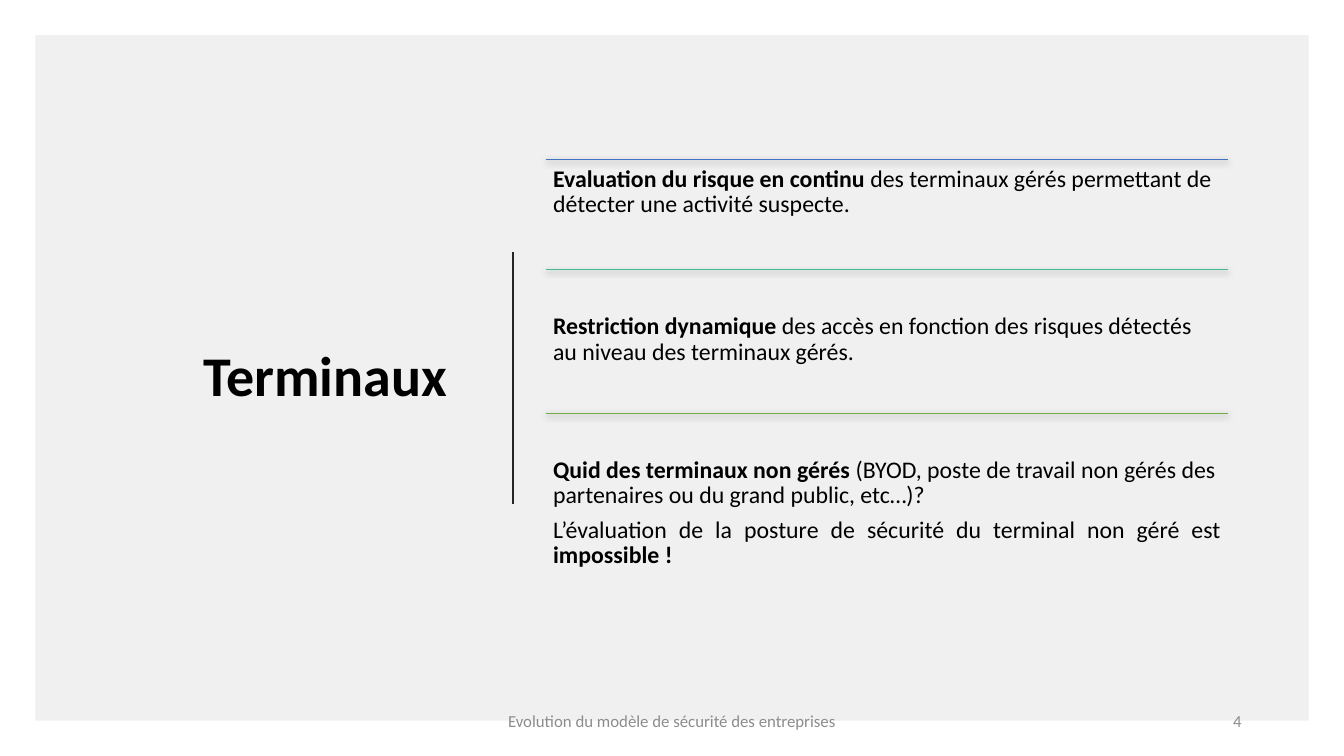
import pptx
import pptx.dml.color
import pptx.enum.shapes
import pptx.enum.text
import pptx.oxml
import pptx.oxml.ns
import pptx.util

RGBColor = pptx.dml.color.RGBColor
Align = pptx.enum.text.PP_ALIGN
Anchor = pptx.enum.text.MSO_ANCHOR
Pt = pptx.util.Pt

PANEL = RGBColor(0xE7, 0xE6, 0xE6)
BLACK = RGBColor(0x00, 0x00, 0x00)
DIVIDER = RGBColor(0x26, 0x26, 0x26)
FOOTER = RGBColor(0x8C, 0x8C, 0x8C)
BLUE = RGBColor(0x44, 0x72, 0xC4)
TEAL = RGBColor(0x43, 0xBB, 0x8D)
GREEN = RGBColor(0x70, 0xAD, 0x47)

COLUMNS, ROWS = 160, 90
NAMESPACE = pptx.oxml.ns.nsdecls("a")
SHADOW = (
    '<a:outerShdw blurRad="57150" dist="19050" dir="5400000" algn="ctr" rotWithShape="0">'
    '<a:srgbClr val="000000"><a:alpha val="63000"/></a:srgbClr></a:outerShdw>'
)


class SlideBuilder:
    """Draws styled elements on one slide, placed by grid columns and rows."""

    font = "Calibri"

    def __init__(self, presentation):
        self.cell_width = presentation.slide_width / COLUMNS
        self.cell_height = presentation.slide_height / ROWS
        self.slide = presentation.slides.add_slide(presentation.slide_layouts[6])

    def place(self, column, row, width, height):
        return (
            round(column * self.cell_width),
            round(row * self.cell_height),
            round(width * self.cell_width),
            round(height * self.cell_height),
        )

    def panel(self, area, color, opacity):
        shape = self.slide.shapes.add_shape(
            pptx.enum.shapes.MSO_SHAPE.RECTANGLE, *self.place(*area)
        )
        shape.shadow.inherit = False
        shape.fill.solid()
        shape.fill.fore_color.rgb = color
        shape.line.fill.background()
        alpha = pptx.oxml.parse_xml(f'<a:alpha {NAMESPACE} val="{opacity * 1000}"/>')
        shape.fill._xPr.find(".//" + pptx.oxml.ns.qn("a:srgbClr")).append(alpha)

    def line(self, start, end, color, width, shadow=""):
        connector = self.slide.shapes.add_connector(
            pptx.enum.shapes.MSO_CONNECTOR.STRAIGHT,
            *self.place(*start, *end),
        )
        connector.line.color.rgb = color
        connector.line.width = Pt(width)
        effects = f"<a:effectLst {NAMESPACE}>{shadow}</a:effectLst>"
        connector._element.spPr.append(pptx.oxml.parse_xml(effects))

    def text(self, area, paragraphs, size, color=BLACK, anchor=Anchor.MIDDLE,
             inset=None, line_spacing=1, space_after=0):
        box = self.slide.shapes.add_textbox(*self.place(*area))
        frame = box.text_frame
        frame.word_wrap = True
        frame.vertical_anchor = anchor
        if inset:
            side, frame.margin_top = (pptx.util.Inches(value) for value in inset)
            frame.margin_left = frame.margin_right = frame.margin_bottom = side
        for index, (alignment, runs) in enumerate(paragraphs):
            paragraph = frame.add_paragraph() if index else frame.paragraphs[0]
            paragraph.alignment = alignment
            paragraph.line_spacing = line_spacing
            paragraph.space_after = Pt(space_after)
            paragraph.font.name = self.font
            paragraph.font.size = Pt(size)
            paragraph.font.color.rgb = color
            for content, bold in runs:
                run = paragraph.add_run()
                run.text = content
                run.font.bold = bold

    def section(self, row, height, color, top_inset, paragraphs):
        column, width = 65, 81.2
        self.line((column, row), (column + width, row), color, 0.5, SHADOW)
        self.text((column, row, width, height), paragraphs, 17, anchor=Anchor.TOP,
                  inset=(0.07, top_inset), line_spacing=0.9, space_after=6)


SECTIONS = [
    (19, 13.1, BLUE, 0.07, [
        (Align.LEFT, [
            ("Evaluation du risque en continu", True),
            (" des terminaux gérés permettant de détecter une activité suspecte.", False),
        ]),
    ]),
    (32.1, 17.1, TEAL, 0.44, [
        (Align.LEFT, [
            ("Restriction dynamique ", True),
            ("des accès en fonction des risques détectés au niveau des terminaux gérés.", False),
        ]),
    ]),
    (49.2, 25.1, GREEN, 0.44, [
        (Align.LEFT, [
            ("Quid des terminaux non gérés ", True),
            ("(BYOD, poste de travail non gérés des partenaires ou du grand public, etc…)?", False),
        ]),
        (Align.JUSTIFY, [
            ("L’évaluation de la posture de sécurité du terminal non géré est ", False),
            ("impossible !", True),
        ]),
    ]),
]


def main():
    presentation = pptx.Presentation()
    presentation.slide_width = pptx.util.Inches(13.33)
    presentation.slide_height = pptx.util.Inches(7.5)
    builder = SlideBuilder(presentation)
    builder.panel((4.2, 4.2, 151.6, 81.6), PANEL, 60)
    builder.text((11, 14, 43.4, 62), [(Align.RIGHT, [("Terminaux", True)])], 40,
                 line_spacing=0.9)
    builder.line((61.1, 30), (61.1, 60), DIVIDER, 1.5)
    for section in SECTIONS:
        builder.section(*section)
    footer = "Evolution du modèle de sécurité des entreprises"
    builder.text((53, 83.4, 54, 4.8), [(Align.CENTER, [(footer, False)])], 12, FOOTER)
    builder.text((113, 83.4, 36, 4.8), [(Align.RIGHT, [("4", False)])], 12, FOOTER)
    presentation.save("out.pptx")


if __name__ == "__main__":
    main()
